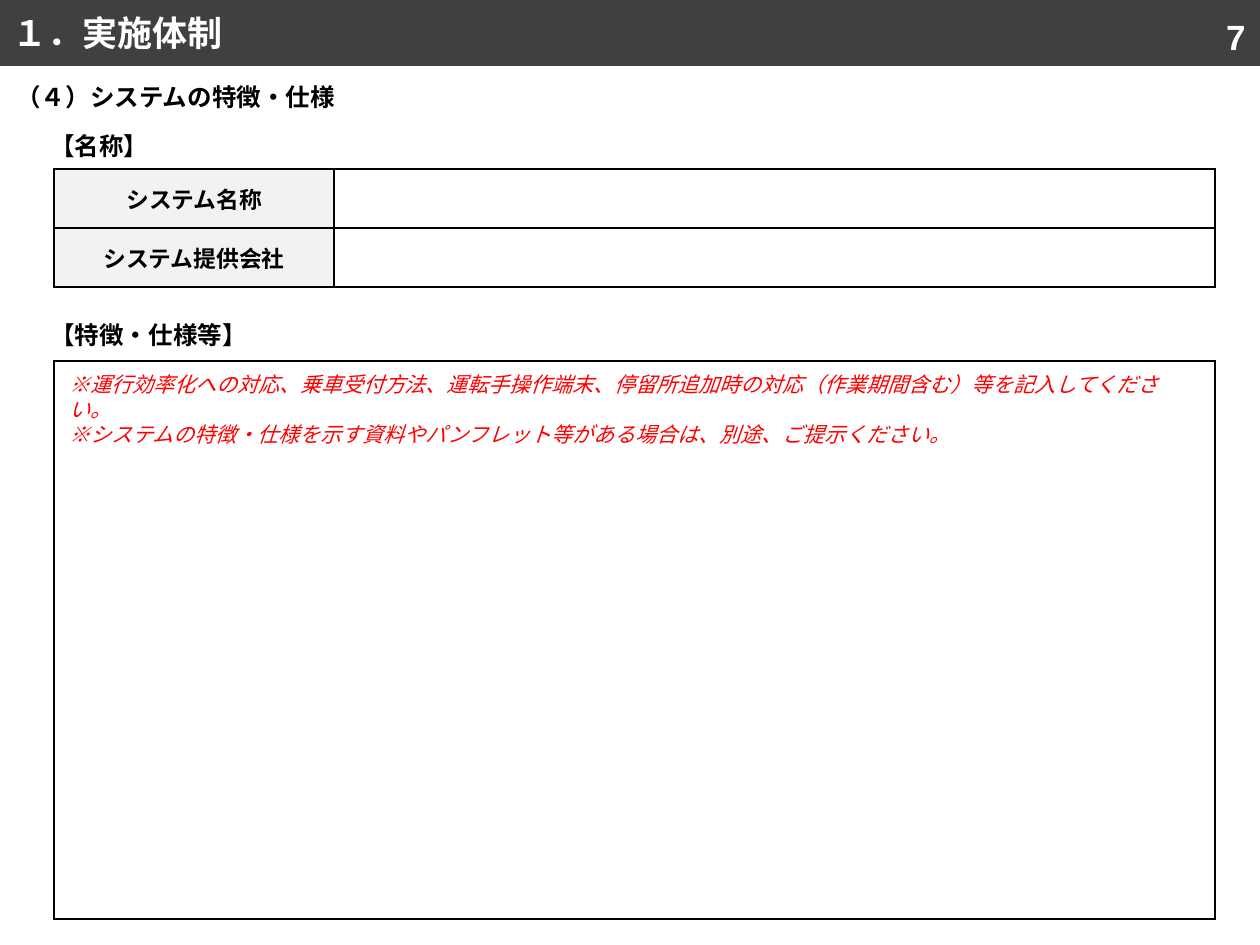
"""Build the form slide for the features and specifications of a system."""
import lxml.etree
import pptx
import pptx.dml.color
import pptx.enum.text
import pptx.oxml.ns
import pptx.util

PX = 914400 / 126
HEX = {"bar": "404040", "white": "FFFFFF", "black": "000000",
       "head": "F2F2F2", "note": "FF0000"}
CJK = "Noto Sans CJK JP"
ALIGN = pptx.enum.text.PP_ALIGN
MID = pptx.enum.text.MSO_ANCHOR.MIDDLE
qn = pptx.oxml.ns.qn


def emu(*sizes):
    return [pptx.util.Emu(round(size * PX)) for size in sizes]


def write(frame, lines, size, face, color, bold=True, align=ALIGN.LEFT):
    frame.word_wrap = True
    frame.text = "\n".join(lines)
    for para in frame.paragraphs:
        para.alignment = align
        font = para.font
        font.size = pptx.util.Pt(size)
        font.bold = bold
        font.italic = not bold
        font.color.rgb = pptx.dml.color.RGBColor.from_string(HEX[color])
        font.name = face
        props = para._p.pPr.find(qn("a:defRPr"))
        lxml.etree.SubElement(props, qn("a:ea")).set("typeface", CJK)


deck = pptx.Presentation()
deck.slide_width, deck.slide_height = emu(1260, 945)
slide = deck.slides.add_slide(deck.slide_layouts[5])

title = slide.shapes.title
title.left, title.top, title.width, title.height = emu(0, 0, 1260, 66)
title.fill.solid()
title.fill.fore_color.rgb = pptx.dml.color.RGBColor.from_string(HEX["bar"])
title.text_frame.vertical_anchor = MID
write(title.text_frame, ["１．実施体制"], 20, CJK, "white")

tables = [
    (169, [280, 881], 59, [["システム名称", ""], ["システム提供会社", ""]]),
    (361, [1161], 558, [[""]]),
]
for top, cols, high, rows in tables:
    box = emu(54, top, sum(cols), high * len(rows))
    table = slide.shapes.add_table(len(rows), len(cols), *box).table
    table.first_row = table.horz_banding = False
    for col, wide in zip(table.columns, emu(*cols)):
        col.width = wide
    for row, labels in zip(table.rows, rows):
        row.height = emu(high)[0]
        for cell, label in zip(row.cells, labels):
            tone = HEX["head" if label else "white"]
            cell.fill.solid()
            cell.fill.fore_color.rgb = pptx.dml.color.RGBColor.from_string(tone)
            if label:
                cell.vertical_anchor = MID
                cell.margin_left, cell.margin_right = emu(8, 8)
                cell.margin_top = cell.margin_bottom = 0
                write(cell.text_frame, [label], 13, CJK, "black",
                      align=ALIGN.CENTER)
            props = cell._tc.get_or_add_tcPr()
            for spot, side in enumerate("LRTB"):
                line = lxml.etree.Element(qn("a:ln" + side), w="12700")
                fill = lxml.etree.SubElement(line, qn("a:solidFill"))
                ink = lxml.etree.SubElement(fill, qn("a:srgbClr"))
                ink.set("val", HEX["black"])
                props.insert(spot, line)

notes = [
    "※運行効率化への対応、乗車受付方法、運転手操作端末、停留所追加時の対応（作業期間含む）等を記入してください。",
    "※システムの特徴・仕様を示す資料やパンフレット等がある場合は、別途、ご提示ください。",
]
texts = [
    ((38, 125, 712, 43), ["【名称】"], 14, "black", True, ALIGN.LEFT),
    ((38, 314, 712, 43), ["【特徴・仕様等】"], 14, "black", True, ALIGN.LEFT),
    ((57, 365, 1123, 63), notes, 12, "note", False, ALIGN.LEFT),
    ((951, 9, 307, 48), ["7"], 20, "white", True, ALIGN.RIGHT),
    ((4, 76, 712, 43), ["（４）システムの特徴・仕様"], 14, "black", True, ALIGN.LEFT),
]
for box, lines, size, color, bold, align in texts:
    frame = slide.shapes.add_textbox(*emu(*box)).text_frame
    write(frame, lines, size, "Arial", color, bold, align)

deck.save("out.pptx")
